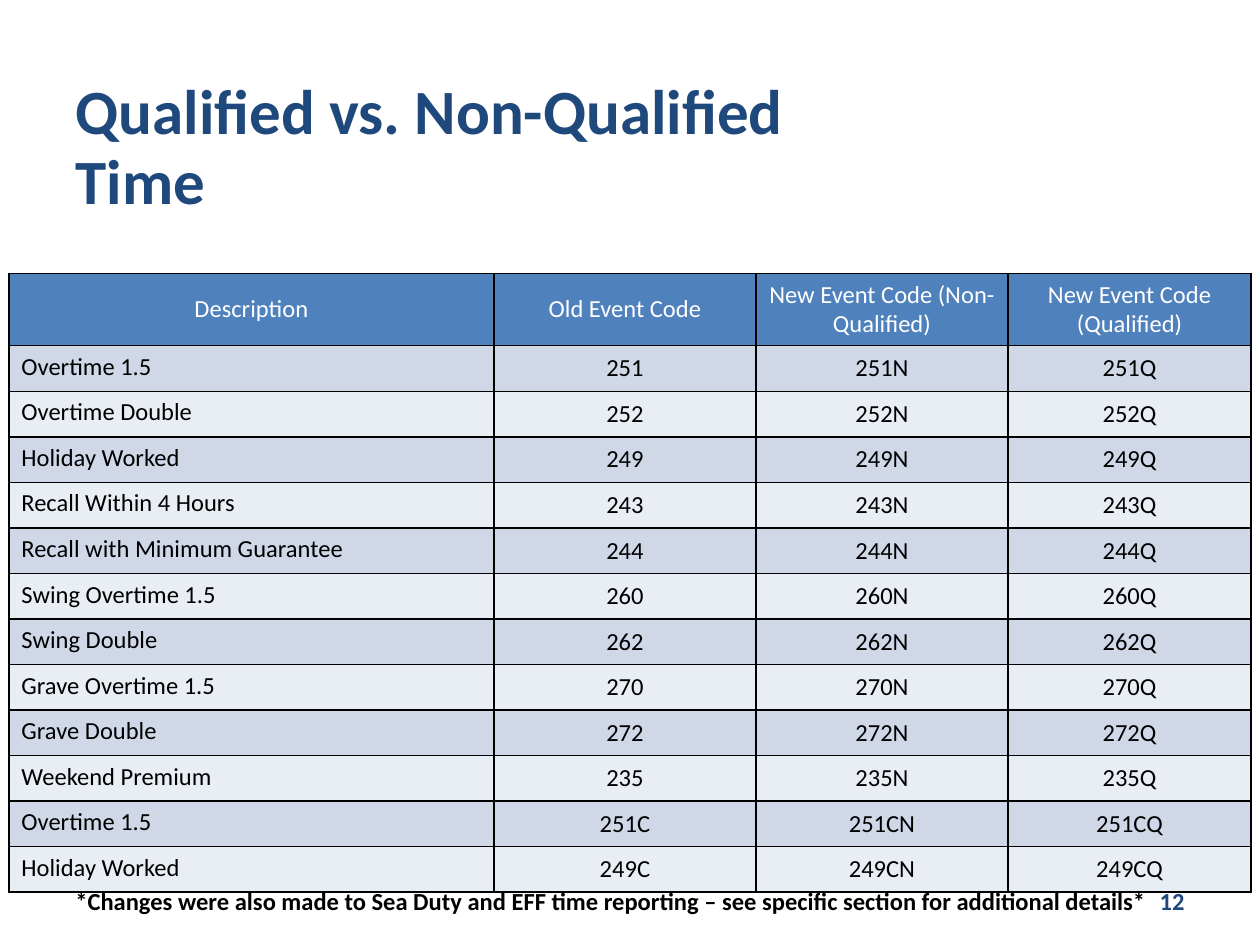
"""Build the slide that maps old event codes to qualified and non-qualified ones."""
from typing import NamedTuple

from lxml.etree import SubElement
from pptx import Presentation
from pptx.dml.color import RGBColor
from pptx.enum.text import MSO_ANCHOR, PP_ALIGN
from pptx.oxml.ns import qn
from pptx.util import Inches, Pt

NAVY = RGBColor(0x1F, 0x49, 0x7D)
BLUE = RGBColor(0x4F, 0x81, 0xBD)
BAND_DARK = RGBColor(0xD0, 0xD8, 0xE8)
BAND_LIGHT = RGBColor(0xE9, 0xED, 0xF4)
BLACK = RGBColor(0, 0, 0)
WHITE = RGBColor(0xFF, 0xFF, 0xFF)


class Event(NamedTuple):
    description: str
    code: str


HEADINGS = (
    "Description",
    "Old Event Code",
    "New Event Code (Non-Qualified)",
    "New Event Code (Qualified)",
)
EVENTS = (
    Event("Overtime 1.5", "251"),
    Event("Overtime Double", "252"),
    Event("Holiday Worked", "249"),
    Event("Recall Within 4 Hours", "243"),
    Event("Recall with Minimum Guarantee", "244"),
    Event("Swing Overtime 1.5", "260"),
    Event("Swing Double", "262"),
    Event("Grave Overtime 1.5", "270"),
    Event("Grave Double", "272"),
    Event("Weekend Premium", "235"),
    Event("Overtime 1.5", "251C"),
    Event("Holiday Worked", "249C"),
)
COLUMN_WIDTHS = (3.85, 2.08, 2, 1.93)
TABLE_HEIGHT = 4.83
HEADER_HEIGHT = 0.49


def write(tf, text, *, size=14, color=BLACK, bold=False, align=PP_ALIGN.LEFT, spacing=None):
    p = tf.paragraphs[0]
    p.alignment = align
    if spacing:
        p.line_spacing = Pt(spacing)
    r = p.add_run()
    r.text = text
    r.font.name = "Calibri"
    r.font.size = Pt(size)
    r.font.bold = bold
    r.font.color.rgb = color


def add_label(slide, text: str, left, top, width, height, anchor=MSO_ANCHOR.TOP, **fmt) -> None:
    tf = slide.shapes.add_textbox(*map(Inches, (left, top, width, height))).text_frame
    tf.word_wrap = True
    tf.vertical_anchor = anchor
    write(tf, text, bold=True, **fmt)


def add_borders(cell) -> None:
    tc_pr = cell._tc.get_or_add_tcPr()
    for index, side in enumerate(("lnL", "lnR", "lnT", "lnB")):
        ln = tc_pr.makeelement(qn(f"a:{side}"), {"w": str(Pt(1))})
        fill = SubElement(ln, qn("a:solidFill"))
        SubElement(fill, qn("a:srgbClr"), val=str(BLACK))
        tc_pr.insert(index, ln)


def fill_row(table, row: int, texts, fill: RGBColor, color: RGBColor) -> None:
    for column, text in enumerate(texts):
        cell = table.cell(row, column)
        cell.fill.solid()
        cell.fill.fore_color.rgb = fill
        is_description = row > 0 and column == 0
        cell.vertical_anchor = MSO_ANCHOR.TOP if is_description else MSO_ANCHOR.MIDDLE
        align = PP_ALIGN.LEFT if is_description else PP_ALIGN.CENTER
        write(cell.text_frame, text, color=color, align=align)
        add_borders(cell)


def add_event_table(slide) -> None:
    frame = slide.shapes.add_table(
        len(EVENTS) + 1, len(HEADINGS),
        Inches(0.07), Inches(2.17), Inches(sum(COLUMN_WIDTHS)), Inches(TABLE_HEIGHT),
    )
    table = frame.table
    for column, width in zip(table.columns, COLUMN_WIDTHS):
        column.width = Inches(width)
    for row in table.rows:
        row.height = Inches((TABLE_HEIGHT - HEADER_HEIGHT) / len(EVENTS))
    table.rows[0].height = Inches(HEADER_HEIGHT)

    fill_row(table, 0, HEADINGS, BLUE, WHITE)
    for row, event in enumerate(EVENTS, start=1):
        texts = (event.description, event.code, f"{event.code}N", f"{event.code}Q")
        fill_row(table, row, texts, BAND_DARK if row % 2 else BAND_LIGHT, BLACK)


def main() -> None:
    prs = Presentation()
    prs.slide_width, prs.slide_height = Inches(10), Inches(7.5)
    slide = prs.slides.add_slide(prs.slide_layouts[5])

    title = slide.shapes.title
    title.left, title.top, title.width, title.height = map(Inches, (0.5, 0.5, 6.08, 1.33))
    title.text_frame.vertical_anchor = MSO_ANCHOR.MIDDLE
    write(title.text_frame, "Qualified vs. Non-Qualified Time",
          size=36, color=NAVY, bold=True, spacing=40)

    add_event_table(slide)
    add_label(slide, "12", 7.17, 6.95, 2.33, 0.4,
              anchor=MSO_ANCHOR.MIDDLE, color=NAVY, align=PP_ALIGN.RIGHT)
    add_label(slide, "*Changes were also made to Sea Duty and EFF time reporting – "
              "see specific section for additional details*", 0.5, 6.98, 9, 0.34)
    prs.save("out.pptx")


if __name__ == "__main__":
    main()
